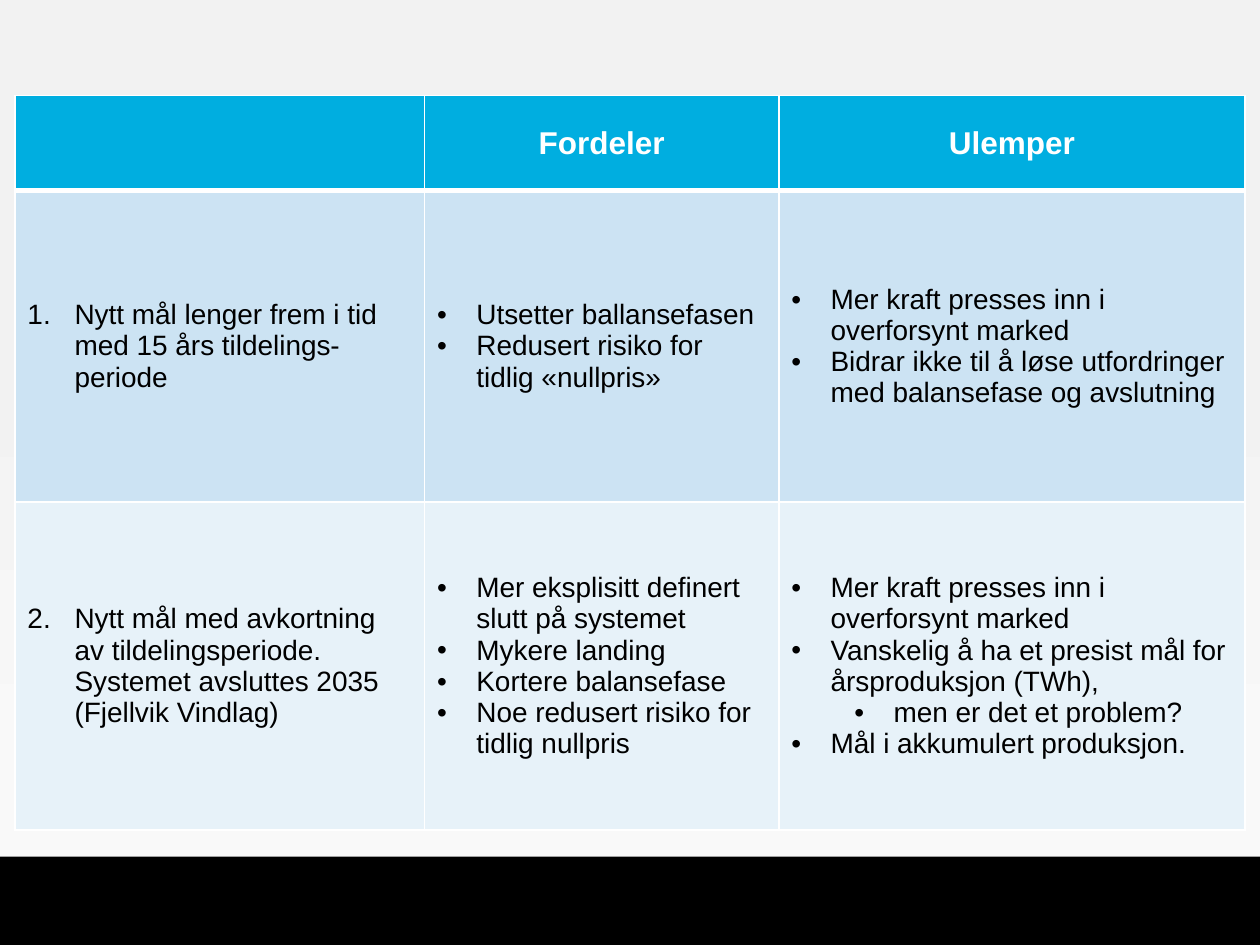
from lxml.etree import SubElement
from pptx import Presentation
from pptx.dml.color import RGBColor
from pptx.enum.shapes import MSO_SHAPE
from pptx.enum.text import MSO_ANCHOR, PP_ALIGN
from pptx.oxml.ns import qn
from pptx.util import Cm, Pt

HEADERS = ["", "Fordeler", "Ulemper"]
ALTERNATIVES = [
    (
        "Nytt mål lenger frem i tid med 15 års tildelings-periode",
        [(0, "Utsetter ballansefasen"), (0, "Redusert risiko for tidlig «nullpris»")],
        [
            (0, "Mer kraft presses inn i overforsynt marked"),
            (0, "Bidrar ikke til å løse utfordringer med balansefase og avslutning"),
        ],
    ),
    (
        "Nytt mål med avkortning av tildelingsperiode. Systemet avsluttes 2035\v(Fjellvik Vindlag)",
        [
            (0, "Mer eksplisitt definert slutt på systemet"),
            (0, "Mykere landing"),
            (0, "Kortere balansefase"),
            (0, "Noe redusert risiko for tidlig nullpris"),
        ],
        [
            (0, "Mer kraft presses inn i overforsynt marked"),
            (0, "Vanskelig å ha et presist mål for årsproduksjon (TWh),"),
            (1, "men er det et problem?"),
            (0, "Mål i akkumulert produksjon."),
        ],
    ),
]
COLUMN_WIDTHS = [8.26, 7.14, 9.4]
ROW_HEIGHTS = [1.91, 6.28, 6.61]
ROW_FILLS = ["00AEE0", "CCE3F3", "E7F2F9"]


def rgb(hex_colour):
    """Turn a hex string into a colour."""
    return RGBColor.from_string(hex_colour)


def write(paragraph, text, size=16, colour="000000", bold=False, align=PP_ALIGN.LEFT,
          level=0, number=None, bullet=False):
    """Write one paragraph, with an optional number or bullet."""
    paragraph.text = text
    paragraph.alignment = align
    paragraph.level = level
    if number or bullet:
        hanging = Cm(0.95 if number else 0.79)
        properties = paragraph._p.get_or_add_pPr()
        properties.set("marL", str(hanging + Cm(1.27) * level))
        properties.set("indent", str(-hanging))
        SubElement(properties, qn("a:buFont"), typeface="Arial")
        if number:
            SubElement(properties, qn("a:buAutoNum"), type="arabicPeriod", startAt=str(number))
        else:
            SubElement(properties, qn("a:buChar"), char="•")
    for line_break in paragraph._p.findall(qn("a:br")):
        SubElement(line_break, qn("a:rPr"), sz=str(size * 100))
    for run in paragraph.runs:
        run.font.name = "Arial"
        run.font.size = Pt(size)
        run.font.bold = bold
        run.font.color.rgb = rgb(colour)


def style_cell(cell, fill, top=1, bottom=1):
    """Give a cell white borders, a fill and middle anchoring."""
    properties = cell._tc.get_or_add_tcPr()
    for side, width in (("L", 1), ("R", 1), ("T", top), ("B", bottom)):
        border = SubElement(properties, qn(f"a:ln{side}"), w=str(Pt(width)))
        SubElement(SubElement(border, qn("a:solidFill")), qn("a:srgbClr"), val="FFFFFF")
    cell.fill.solid()
    cell.fill.fore_color.rgb = rgb(fill)
    cell.vertical_anchor = MSO_ANCHOR.MIDDLE


def add_panel(slide, left, top, width, height):
    """Add a rectangle without line or shadow."""
    panel = slide.shapes.add_shape(
        MSO_SHAPE.RECTANGLE, Cm(left), Cm(top), Cm(width), Cm(height))
    panel.shadow.inherit = False
    panel.line.fill.background()
    return panel


def add_backdrop(slide, width, height):
    """Add the grey background, the fade to white and the black footer."""
    slide.background.fill.solid()
    slide.background.fill.fore_color.rgb = rgb("F2F2F2")
    footer_height = 1.78
    fade = add_panel(slide, 0, 3.58, width, 13.89).fill
    fade.gradient()
    fade.gradient_angle = 270
    for stop, position, colour in zip(fade.gradient_stops, (0.24, 0.9), ("F2F2F2", "F9F9F9")):
        stop.position = position
        stop.color.rgb = rgb(colour)
    footer = add_panel(slide, 0, height - footer_height, width, footer_height)
    footer.fill.solid()
    footer.fill.fore_color.rgb = rgb("000000")


def add_comparison(slide, left, top):
    """Add the table of alternatives with advantages and drawbacks."""
    table = slide.shapes.add_table(
        len(ROW_HEIGHTS), len(COLUMN_WIDTHS), Cm(left), Cm(top),
        Cm(sum(COLUMN_WIDTHS)), Cm(sum(ROW_HEIGHTS))).table
    for column, width in zip(table.columns, COLUMN_WIDTHS):
        column.width = Cm(width)
    for index, (row, height, fill) in enumerate(zip(table.rows, ROW_HEIGHTS, ROW_FILLS)):
        row.height = Cm(height)
        for cell in row.cells:
            style_cell(cell, fill, top=3 if index == 1 else 1, bottom=3 if index == 0 else 1)
    for column, header in enumerate(HEADERS):
        write(table.cell(0, column).text_frame.paragraphs[0], header,
              size=18, colour="FFFFFF", bold=True, align=PP_ALIGN.CENTER)
    for number, (alternative, *arguments) in enumerate(ALTERNATIVES, 1):
        write(table.cell(number, 0).text_frame.paragraphs[0], alternative, number=number)
        for column, points in enumerate(arguments, 1):
            frame = table.cell(number, column).text_frame
            for position, (level, point) in enumerate(points):
                paragraph = frame.add_paragraph() if position else frame.paragraphs[0]
                write(paragraph, point, level=level, bullet=True)


def main():
    """Build and save the slide."""
    width, height = 25.4, 19.05
    presentation = Presentation()
    presentation.slide_width = Cm(width)
    presentation.slide_height = Cm(height)
    slide = presentation.slides.add_slide(presentation.slide_layouts[6])
    add_backdrop(slide, width, height)
    add_comparison(slide, 0.3, 1.93)
    presentation.save("out.pptx")


if __name__ == "__main__":
    main()
